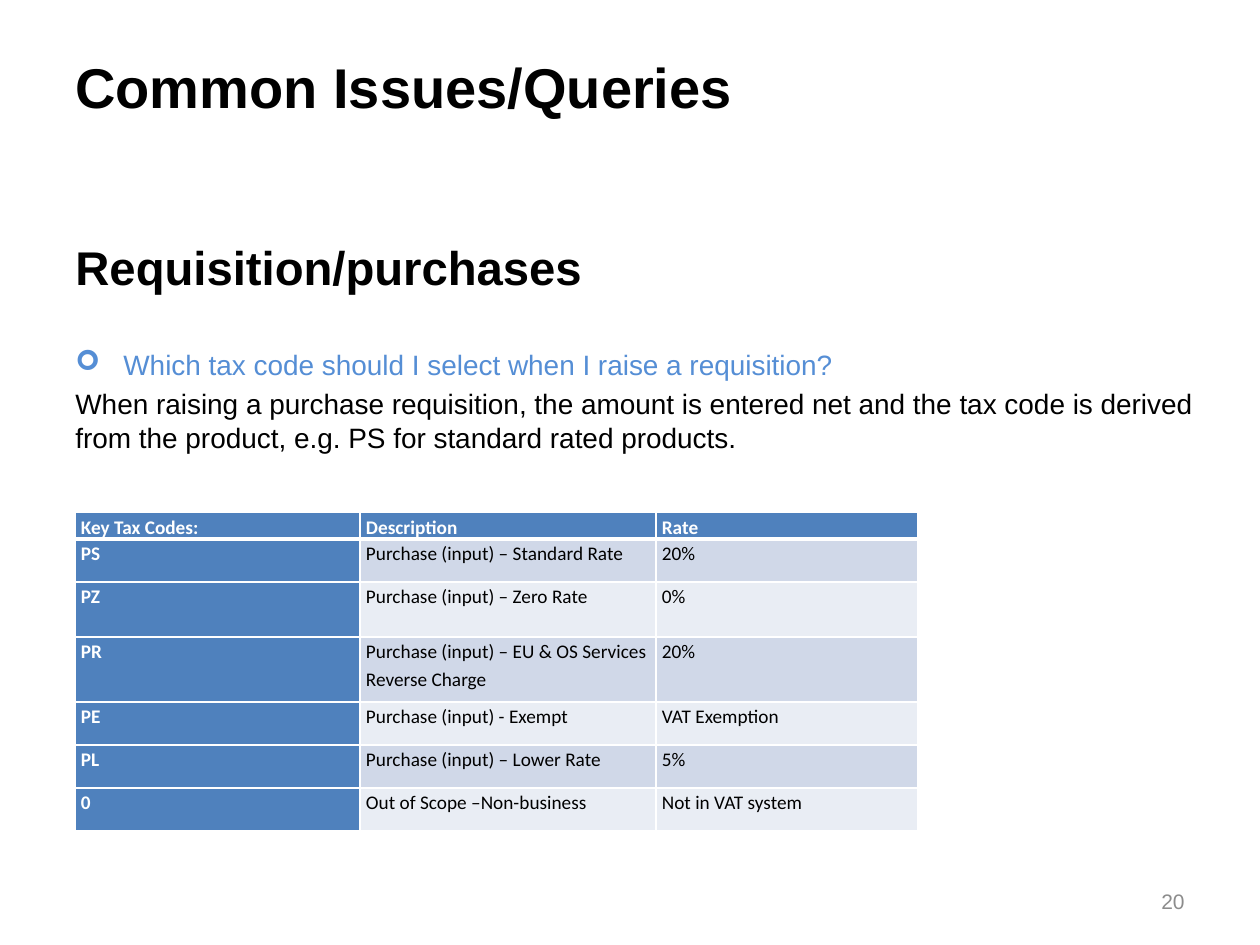
from lxml.etree import SubElement as Sub
from pptx import Presentation
from pptx.dml.color import RGBColor
from pptx.enum.text import MSO_ANCHOR as Anchor, PP_ALIGN as Align
from pptx.oxml.ns import qn
from pptx.util import Pt

PX = 914400 / 126  # EMU in one px

BASE = {"name": "Arial", "size": Pt(16), "bold": False}
TITLE = BASE | {"size": Pt(32), "bold": True}
HEAD = BASE | {"size": Pt(27), "bold": True}
NUM = BASE | {"size": Pt(12)}
CELL = {"name": "Calibri", "size": Pt(11), "bold": False}
KEY = CELL | {"bold": True}

COLS = [285, 296, 262]
HIGHS = [27, 43, 55, 65, 43, 43, 43]
ROWS = [
    ("Key Tax Codes:", "Description", "Rate"),
    ("PS", "Purchase (input) – Standard Rate", "20%"),
    ("PZ", "Purchase (input) – Zero Rate", "0%"),
    ("PR", "Purchase (input) – EU & OS Services Reverse Charge", "20%"),
    ("PE", "Purchase (input) - Exempt", "VAT Exemption"),
    ("PL", "Purchase (input) – Lower Rate", "5%"),
    ("0", "Out of Scope –Non-business", "Not in VAT system"),
]


def emu(px):
    return round(px * PX)


def rgb(code):
    return RGBColor.from_string(code)


def style(item, values):
    for key, value in values.items():
        setattr(item, key, value)


def write(para, text, form, color="000000", **layout):
    para.text = text
    style(para, layout)
    style(para.font, form)
    para.font.color.rgb = rgb(color)


def frame(slide, box, anchor=Anchor.TOP):
    text = slide.shapes.add_textbox(*map(emu, box)).text_frame
    style(text, {"word_wrap": True, "vertical_anchor": anchor})
    return text


def bullet(para, mark, indent):
    props = para._p.get_or_add_pPr()
    props.set("marL", str(emu(indent)))
    props.set("indent", str(-emu(indent)))
    Sub(props, qn("a:buFont"), typeface="Wingdings")
    Sub(props, qn("a:buChar"), char=mark)


def edge(cell, side, width):
    line = Sub(cell._tc.get_or_add_tcPr(), qn(f"a:{side}"), w=str(Pt(width)))
    Sub(Sub(line, qn("a:solidFill")), qn("a:srgbClr"), val="FFFFFF")


def title(slide, box):
    text = frame(slide, box, Anchor.BOTTOM)
    write(text.paragraphs[0], "Common Issues/Queries", TITLE,
          alignment=Align.JUSTIFY)


def body(slide, box):
    text = frame(slide, box)
    write(text.paragraphs[0], "Requisition/purchases", HEAD)
    ask = text.add_paragraph()
    bullet(ask, "➢", 48)
    write(ask, "Which tax code should I select when I raise a requisition?",
          BASE, "558ED5", space_before=Pt(30))
    write(text.add_paragraph(),
          "When raising a purchase requisition, the amount is entered net and "
          "the tax code is derived from the product, e.g. PS for standard "
          "rated products.", BASE, space_before=Pt(3.2))


def codes(slide, left, top):
    box = map(emu, (left, top, sum(COLS), sum(HIGHS)))
    table = slide.shapes.add_table(len(ROWS), len(COLS), *box).table
    for col, width in zip(table.columns, COLS):
        col.width = emu(width)
    for row, high in zip(table.rows, HIGHS):
        row.height = emu(high)
    for r, row in enumerate(ROWS):
        for c, text in enumerate(row):
            cell = table.cell(r, c)
            key = r == 0 or c == 0
            style(cell, {"margin_left": emu(6), "margin_right": emu(6),
                         "margin_top": 0, "margin_bottom": 0})
            # Thick rule between the header and the first row
            for side in ("lnL", "lnR", "lnT", "lnB"):
                thick = (r, side) in ((0, "lnB"), (1, "lnT"))
                edge(cell, side, 3 if thick else 1)
            cell.fill.solid()
            band = "D0D8E8" if r % 2 else "E9EDF4"
            cell.fill.fore_color.rgb = rgb("4F81BD" if key else band)
            write(cell.text_frame.paragraphs[0], text, KEY if key else CELL,
                  "FFFFFF" if key else "000000",
                  line_spacing=1.15, space_after=Pt(10))


def number(slide, box):
    text = frame(slide, box, Anchor.MIDDLE)
    write(text.paragraphs[0], "20", NUM, "8C8C8C", alignment=Align.RIGHT)


def main():
    deck = Presentation()
    style(deck, {"slide_width": emu(1260), "slide_height": emu(945)})
    slide = deck.slides.add_slide(deck.slide_layouts[6])
    title(slide, (63, 16, 1131, 110))
    body(slide, (63, 232, 1153, 627))
    codes(slide, 75, 512)
    number(slide, (903, 876, 294, 50))
    deck.save("out.pptx")


if __name__ == "__main__":
    main()
